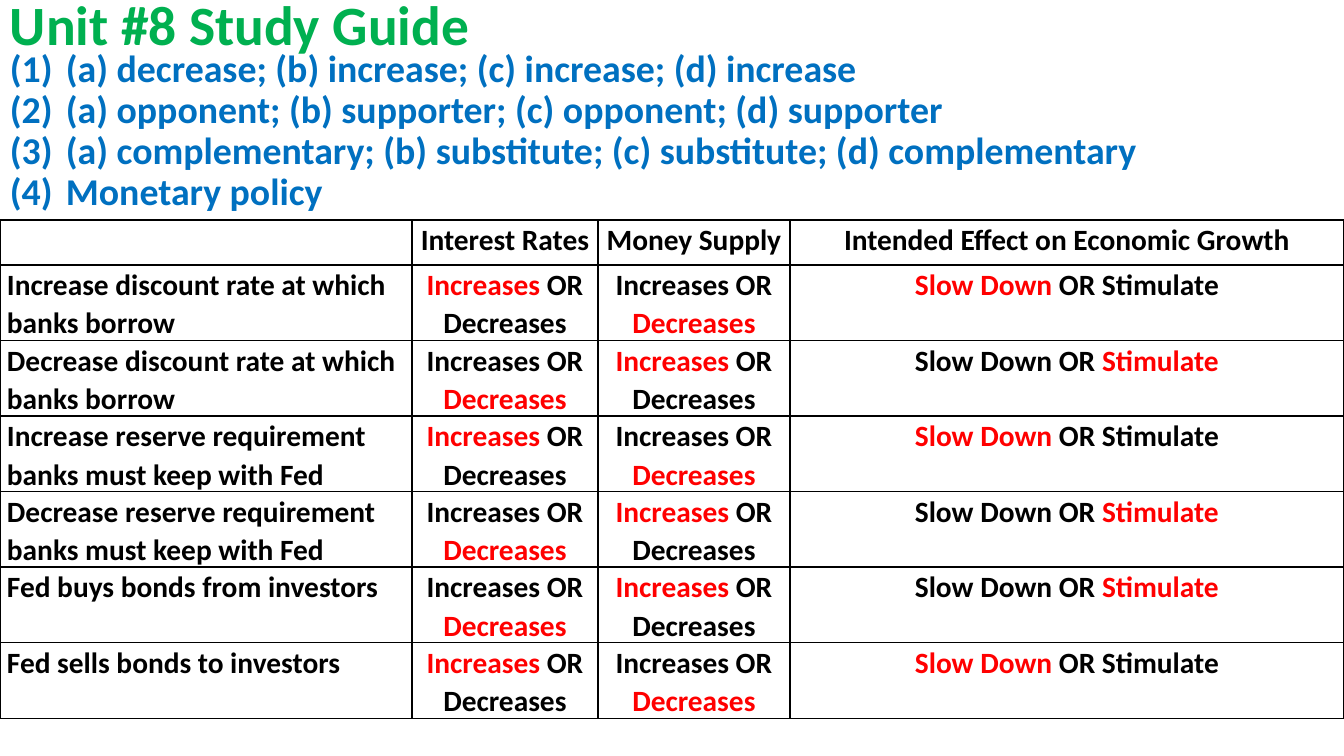
from lxml import etree
from pptx import Presentation
from pptx.dml.color import RGBColor
from pptx.enum.text import MSO_ANCHOR, PP_ALIGN
from pptx.oxml.ns import qn
from pptx.util import Pt

PX = 914400 / 100.8
GREEN = RGBColor(0x00, 0xB0, 0x50)
BLUE = RGBColor(0x00, 0x70, 0xC0)
RED = RGBColor(0xFF, 0x00, 0x00)
BLACK = RGBColor(0x00, 0x00, 0x00)
MIDDLE, TOP = MSO_ANCHOR.MIDDLE, MSO_ANCHOR.TOP
LEFT, CENTER = PP_ALIGN.LEFT, PP_ALIGN.CENTER


def px(length):
    return round(length * PX)


def add_span(para, text, size, color):
    span = para.add_run()
    span.text = text
    span.font.name = "Calibri"
    span.font.size = Pt(size)
    span.font.bold = True
    span.font.color.rgb = color


deck = Presentation()
deck.slide_width, deck.slide_height = px(1344), px(756)
page = deck.slides.add_slide(deck.slide_layouts[6])

# Title
title = page.shapes.add_textbox(0, 0, px(1344), px(54)).text_frame
title.word_wrap = True
title.vertical_anchor = MIDDLE
para = title.paragraphs[0]
para.line_spacing = 0.9
add_span(para, "Unit #8 Study Guide", 39.6, GREEN)

# Numbered answers
ANSWERS = [
    "(a) decrease; (b) increase; (c) increase; (d) increase",
    "(a) opponent; (b) supporter; (c) opponent; (d) supporter",
    "(a) complementary; (b) substitute; (c) substitute; (d) complementary",
    "Monetary policy",
]
answers = page.shapes.add_textbox(0, px(45), px(1344), px(711)).text_frame
answers.word_wrap = True
for index, answer in enumerate(ANSWERS):
    para = answers.add_paragraph() if index else answers.paragraphs[0]
    para.line_spacing = 0.9
    add_span(para, answer, 27, BLUE)
    props = para._p.get_or_add_pPr()
    props.set("marL", str(px(56)))
    props.set("indent", str(-px(56)))
    font = etree.SubElement(props, qn("a:buFont"))
    font.set("typeface", "+mj-lt")
    number = etree.SubElement(props, qn("a:buAutoNum"))
    number.set("type", "arabicParenBoth")

# Policy table: each choice is a list of (text, color) runs
HEADINGS = ["", "Interest Rates", "Money Supply", "Intended Effect on Economic Growth"]
INCREASES = [("Increases", RED), (" OR Decreases", BLACK)]
DECREASES = [("Increases OR ", BLACK), ("Decreases", RED)]
SLOW_DOWN = [("Slow Down ", RED), ("OR Stimulate", BLACK)]
STIMULATE = [("Slow Down OR ", BLACK), ("Stimulate", RED)]
TIGHT = [INCREASES, DECREASES, SLOW_DOWN]
EASY = [DECREASES, INCREASES, STIMULATE]
POLICIES = [
    ("Increase discount rate at which banks borrow", TIGHT),
    ("Decrease discount rate at which banks borrow", EASY),
    ("Increase reserve requirement banks must keep with Fed", TIGHT),
    ("Decrease reserve requirement banks must keep with Fed", EASY),
    ("Fed buys bonds from investors", EASY),
    ("Fed sells bonds to investors", TIGHT),
]
rows = [[[(heading, BLACK)] for heading in HEADINGS]]
rows += [[[(policy, BLACK)]] + effects for policy, effects in POLICIES]
COLUMN_WIDTHS = [412, 186, 192, 554]
ROW_HEIGHTS = [45] + [72] * len(POLICIES)

table = page.shapes.add_table(len(rows), len(COLUMN_WIDTHS), 0, px(220),
                              px(sum(COLUMN_WIDTHS)), px(sum(ROW_HEIGHTS))).table
table.first_row = False
table.horz_banding = False
for column, width in zip(table.columns, COLUMN_WIDTHS):
    column.width = px(width)
for row, height in zip(table.rows, ROW_HEIGHTS):
    row.height = px(height)

for row_index, row in enumerate(rows):
    for column_index, spans in enumerate(row):
        cell = table.cell(row_index, column_index)
        cell.margin_left = cell.margin_right = px(7)
        cell.margin_top = cell.margin_bottom = 0
        cell.vertical_anchor = TOP

        # Black border on all four sides
        props = cell._tc.get_or_add_tcPr()
        for side in ("a:lnL", "a:lnR", "a:lnT", "a:lnB"):
            line = etree.SubElement(props, qn(side))
            line.set("w", str(Pt(1)))
            fill = etree.SubElement(line, qn("a:solidFill"))
            etree.SubElement(fill, qn("a:srgbClr")).set("val", str(BLACK))
        cell.fill.background()

        para = cell.text_frame.paragraphs[0]
        para.alignment = CENTER if column_index else LEFT
        para.line_spacing = 1.07
        for text, color in spans:
            if text:
                add_span(para, text, 21, color)

deck.save("out.pptx")
